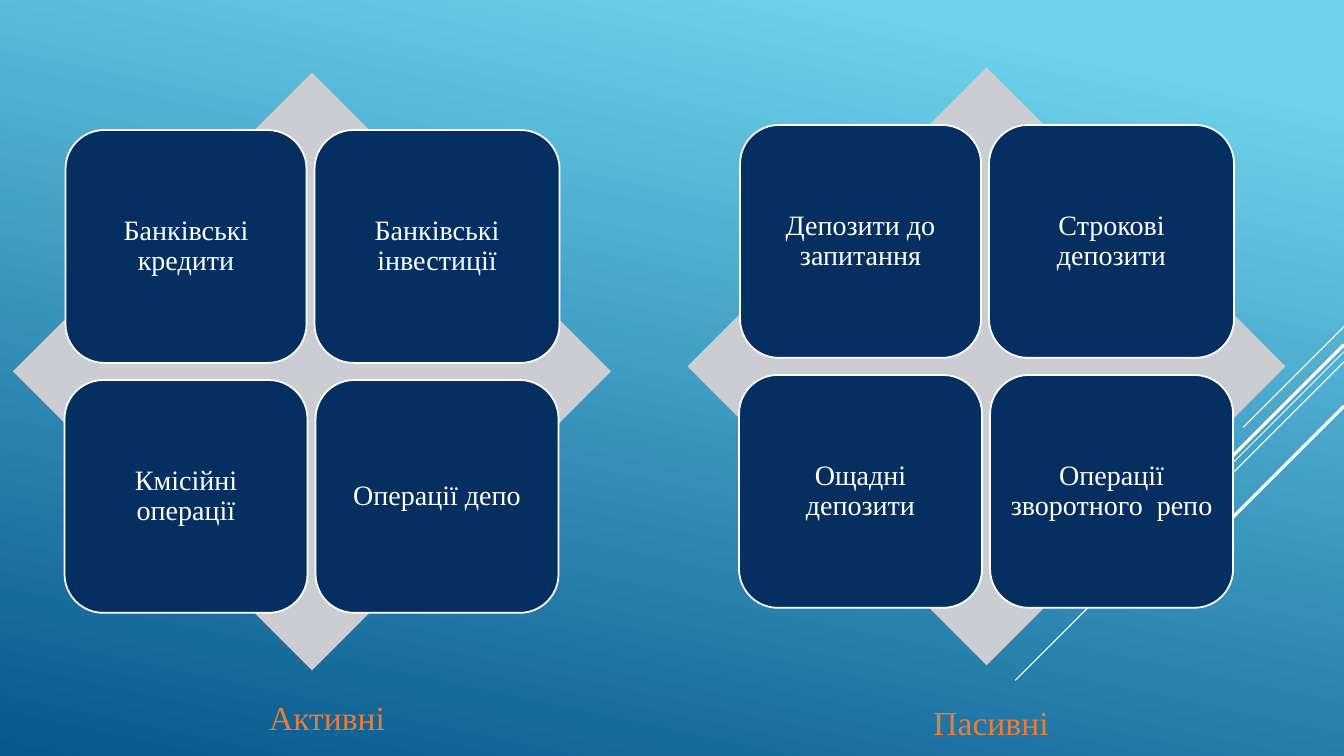
import pptx
import pptx.dml.color
import pptx.enum.shapes
import pptx.enum.text
import pptx.oxml.ns
import pptx.util
from lxml import etree
from pptx.dml.color import RGBColor
from pptx.util import Inches

SKY = RGBColor(0x6E, 0xD2, 0xEB)
DEEP = RGBColor(0x06, 0x58, 0x8E)
WHITE = RGBColor(0xFF, 0xFF, 0xFF)
GREY = RGBColor(0xCC, 0xCD, 0xD2)
NAVY = RGBColor(0x05, 0x2F, 0x61)
ORANGE = RGBColor(0xE8, 0x7D, 0x37)
FONT = "Times New Roman"

# Diagonal rays: start height on the right edge, run to the lower left, width
RAYS = [(3.24, 1.0, 0.75), (3.49, 3.26, 0.75), (3.59, 2.07, 0.75),
        (3.42, 1.91, 2.25), (4.03, 1.39, 2.25)]
# Tiles relative to the diamond: left, top, width
TILES = [(0.52, 0.57, 2.39), (2.99, 0.57, 2.43),
         (0.51, 3.05, 2.41), (3.0, 3.05, 2.41)]
DIAMOND_SIZE = 5.93
TILE_HEIGHT = 2.31

ACTIVE = ["Банківські кредити", "Банківські інвестиції",
          "Кмісійні операції", "Операції депо"]
PASSIVE = ["Депозити до запитання", "Строкові депозити",
           "Ощадні депозити", "Операції зворотного  репо"]


def set_background(slide):
    fill = slide.background.fill
    fill.gradient()
    fill.gradient_angle = 258
    for stop, color, position in zip(fill.gradient_stops, (SKY, DEEP), (0.1, 1)):
        stop.color.rgb = color
        stop.position = position


def add_ray(slide, top, run, width):
    right = 13.33
    line = slide.shapes.add_connector(
        pptx.enum.shapes.MSO_CONNECTOR.STRAIGHT, Inches(right), Inches(top),
        Inches(right - run), Inches(top + run))
    line.line.color.rgb = WHITE
    line.line.width = pptx.util.Pt(width)
    etree.SubElement(line._element.spPr, pptx.oxml.ns.qn("a:effectLst"))


def add_filled(slide, kind, left, top, width, height, color):
    sp = slide.shapes.add_shape(kind, Inches(left), Inches(top),
                                Inches(width), Inches(height))
    sp.shadow.inherit = False
    sp.fill.solid()
    sp.fill.fore_color.rgb = color
    sp.line.fill.background()
    return sp


def write(tf, text, size, color):
    tf.text = text
    p = tf.paragraphs[0]
    font = p.runs[0].font
    font.name = FONT
    font.size = pptx.util.Pt(size)
    font.color.rgb = color
    return p


def add_tile(slide, left, top, width, text):
    sp = add_filled(slide, pptx.enum.shapes.MSO_SHAPE.ROUNDED_RECTANGLE,
                    left, top, width, TILE_HEIGHT, NAVY)
    sp.line.color.rgb = WHITE
    sp.line.width = pptx.util.Pt(1.25)
    tf = sp.text_frame
    tf.word_wrap = True
    tf.vertical_anchor = pptx.enum.text.MSO_ANCHOR.MIDDLE
    tf.margin_left = tf.margin_right = Inches(0.08)
    tf.margin_top = tf.margin_bottom = Inches(0.08)
    p = write(tf, text, 20, WHITE)
    p.alignment = pptx.enum.text.PP_ALIGN.CENTER
    p.line_spacing = 0.9


def add_matrix(slide, left, top, labels):
    add_filled(slide, pptx.enum.shapes.MSO_SHAPE.DIAMOND,
               left, top, DIAMOND_SIZE, DIAMOND_SIZE, GREY)
    for (dx, dy, width), label in zip(TILES, labels):
        add_tile(slide, left + dx, top + dy, width, label)


def add_caption(slide, left, top, text):
    box = slide.shapes.add_textbox(Inches(left), Inches(top),
                                   Inches(1.37), Inches(0.5))
    tf = box.text_frame
    tf.word_wrap = False
    tf.auto_size = pptx.enum.text.MSO_AUTO_SIZE.SHAPE_TO_FIT_TEXT
    write(tf, text, 24, ORANGE)


def main():
    prs = pptx.Presentation()
    prs.slide_width = Inches(13.33)
    prs.slide_height = Inches(7.5)
    slide = prs.slides.add_slide(prs.slide_layouts[6])

    # Backdrop
    set_background(slide)
    for ray in RAYS:
        add_ray(slide, *ray)

    # Two diamonds of bank operations
    add_matrix(slide, 0.13, 0.72, ACTIVE)
    add_matrix(slide, 6.82, 0.67, PASSIVE)

    # Captions
    add_caption(slide, 2.57, 6.86, "Активні")
    add_caption(slide, 9.16, 6.91, "Пасивні")

    prs.save("out.pptx")


if __name__ == "__main__":
    main()
